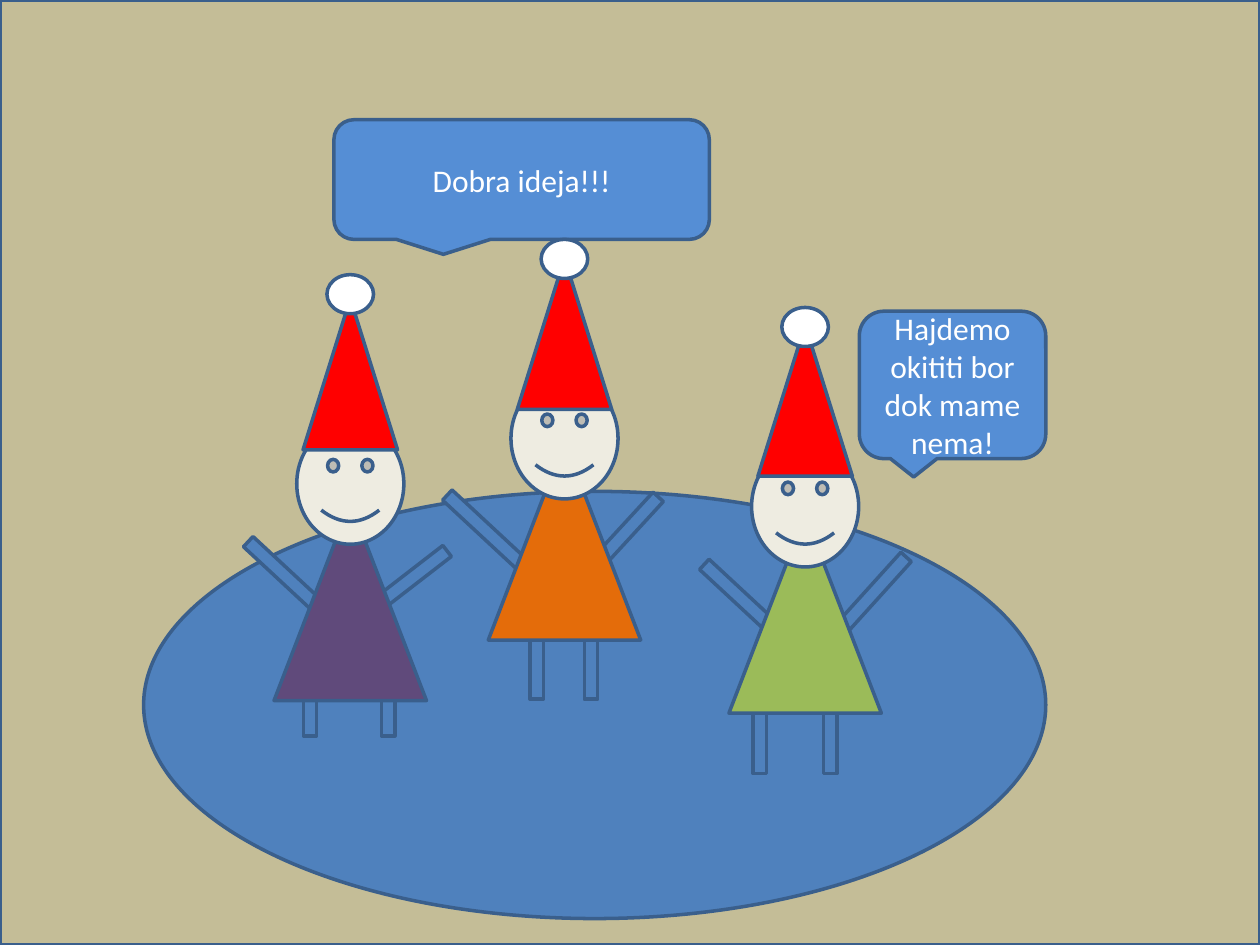
from pptx import Presentation, util as u
from pptx.dml.color import RGBColor
from pptx.enum import shapes, text

KIND = shapes.MSO_SHAPE
WIDTH, HEIGHT = 10, 7.5
OUTLINE, LIMB, BUBBLE = "3A5F8C", "4F81BD", "558ED5"

# left, top, width, height
SPEECH = [
    ("Hajdemo okititi bor dok mame nema!", (6.82, 2.47, 1.48, 1.17)),
    ("Dobra ideja!!!", (2.65, 0.95, 2.98, 0.95)),
]

# part: preset, width, height, colour (None: the child's own dress colour)
PARTS = {
    "dress": (KIND.ISOSCELES_TRIANGLE, 1.21, 1.57, None),
    "head": (KIND.SMILEY_FACE, 0.85, 0.96, "EEECE1"),
    "hat": (KIND.ISOSCELES_TRIANGLE, 0.75, 1.2, "FF0000"),
    "pompom": (KIND.OVAL, 0.37, 0.31, "FFFFFF"),
}
LEG_SIZE, ARM_SIZE = (1.21, 0.45), (1.3, 0.47)

# axis: x of the child's middle; tops: top of each part
# legs: offsets from the axis; arms: (offset from the axis, middle y, angle)
CHILDREN = [
    dict(axis=2.78, colour="604A7B", leg_y=5.395, legs=(-0.32, 0.3),
         arms=((-0.46, 4.625, 42.9), (0.39, 4.665, 142.3)),
         tops=dict(dress=3.99, head=3.36, hat=2.37, pompom=2.18)),
    dict(axis=4.48, colour="E46C0A", leg_y=5.105, legs=(0.21, -0.22),
         arms=((0.42, 4.295, 132.6), (-0.58, 4.255, 42.9)),
         tops=dict(dress=3.51, head=3.0, hat=2.05, pompom=1.9)),
    dict(axis=6.39, colour="9BBB59", leg_y=5.695, legs=(0.2, -0.36),
         arms=((0.48, 4.775, 132.1), (-0.45, 4.805, 42.9)),
         tops=dict(dress=4.09, head=3.54, hat=2.58, pompom=2.44)),
]


def rgb(colour):
    return RGBColor.from_string(colour)


def draw(parent, kind, box, colour, angle=0):
    shape = parent.add_shape(kind, *(u.Inches(length) for length in box))
    shape.shadow.inherit = False
    shape.fill.solid()
    shape.fill.fore_color.rgb = rgb(colour)
    shape.line.color.rgb = rgb(OUTLINE)
    shape.line.width = u.Pt(2)
    shape.rotation = angle
    return shape


def write(shape, words, size=18, font="Calibri", colour="FFFFFF"):
    frame = shape.text_frame
    frame.word_wrap = True
    frame.vertical_anchor = text.MSO_ANCHOR.MIDDLE
    paragraph = frame.paragraphs[0]
    paragraph.alignment = text.PP_ALIGN.CENTER
    run = paragraph.add_run()
    run.text = words
    run.font.size, run.font.name = u.Pt(size), font
    run.font.color.rgb = rgb(colour)


def draw_limb(parent, x, y, size, angle):
    """Draw an arm or a leg around its middle point."""
    width, height = size
    draw(parent, KIND.MATH_MINUS, (x - width / 2, y - height / 2, width, height),
         LIMB, angle)


def draw_child(canvas, axis, colour, leg_y, legs, arms, tops):
    child = canvas.add_group_shape().shapes
    for offset in legs:
        draw_limb(child, axis + offset, leg_y, LEG_SIZE, 90)
    for offset, y, angle in arms:
        draw_limb(child, axis + offset, y, ARM_SIZE, angle)
    for part, (kind, width, height, own) in PARTS.items():
        draw(child, kind, (axis - width / 2, tops[part], width, height),
             own or colour)


def main():
    deck = Presentation()
    deck.slide_width, deck.slide_height = u.Inches(WIDTH), u.Inches(HEIGHT)
    canvas = deck.slides.add_slide(deck.slide_layouts[6]).shapes

    draw(canvas, KIND.RECTANGLE, (0, 0, WIDTH, HEIGHT), "C4BD97")
    draw(canvas, KIND.OVAL, (1.14, 3.9, 7.16, 3.39), LIMB)
    for words, box in SPEECH:
        write(draw(canvas, KIND.ROUNDED_RECTANGULAR_CALLOUT, box, BUBBLE), words)
    for child in CHILDREN:
        draw_child(canvas, **child)

    deck.save("out.pptx")


if __name__ == "__main__":
    main()
